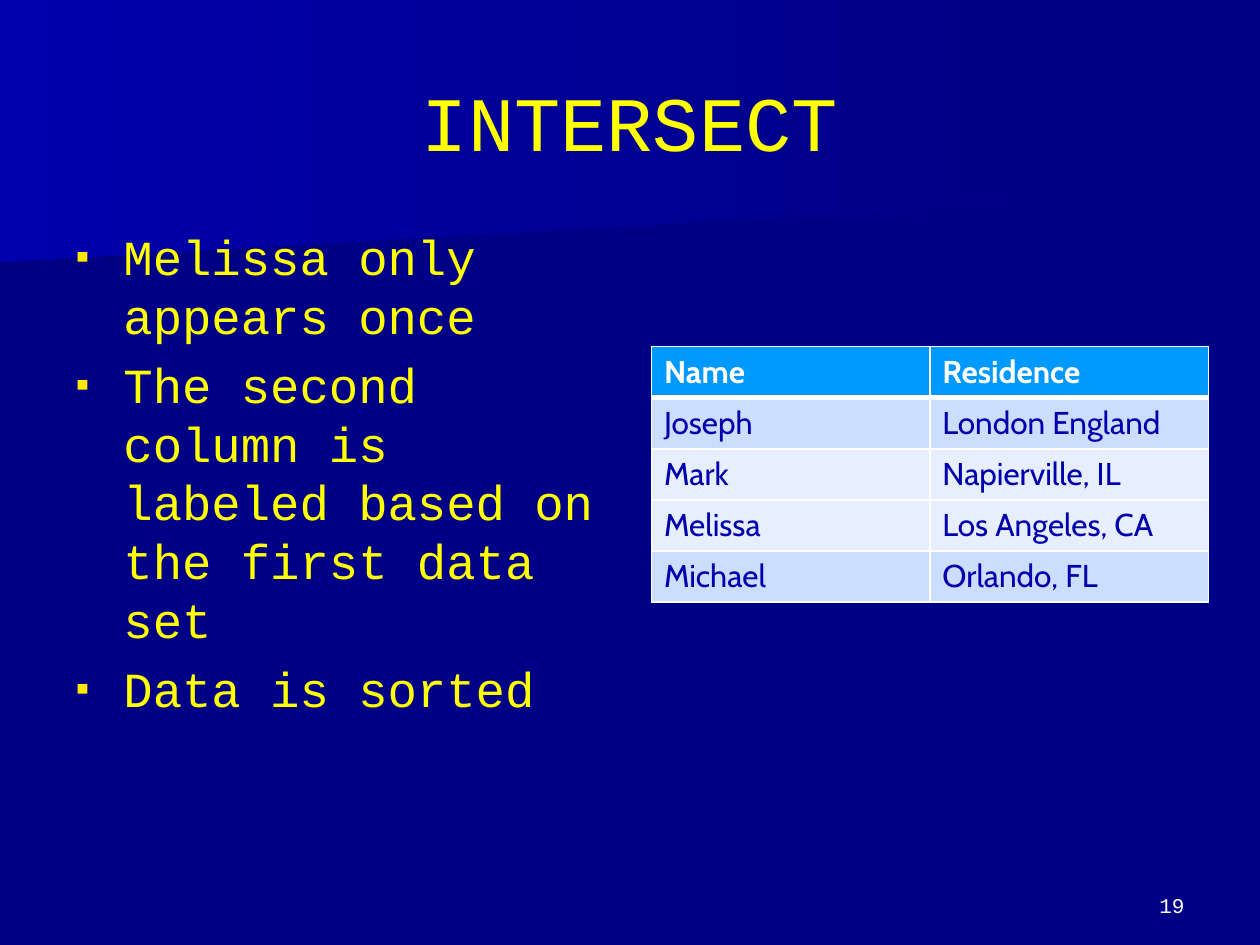
"""Build the INTERSECT slide with its bullet list and result table."""
from lxml import etree
from pptx import Presentation
from pptx import util as u
from pptx.dml.color import RGBColor
from pptx.enum import text
from pptx.oxml import ns

COLORS = {
    "back": "000086", "shade": "000083", "glow": "0000AC", "yellow": "FFFF00",
    "bullet": "FFE701", "white": "FFFFFF", "header": "0099FF",
    "band": "CBDEFF", "light": "E7EFFF",
}
MONO, SANS = "Courier New", "Cabin"
TITLE = "INTERSECT"
BULLETS = [
    "Melissa only appears once",
    "The second column is labeled based on the first data set",
    "Data is sorted",
]
ROWS = [
    ("Name", "Residence"),
    ("Joseph", "London England"),
    ("Mark", "Napierville, IL"),
    ("Melissa", "Los Angeles, CA"),
    ("Michael", "Orlando, FL"),
]
ROW_FILLS = ["header", "band", "light", "light", "band"]
PAGE = "19"
BEAMS = [
    ("shade", [(0, 1.01), (7.79, 1.01), (7.78, 1.53), (0, 2.17)]),
    ("glow", [(0, 0), (7.92, 0), (7.92, 1.62), (0, 2.08)]),
]


def rgb(name):
    return RGBColor.from_string(COLORS[name])


def add_color(parent, name):
    etree.SubElement(parent, ns.qn("a:srgbClr"), val=COLORS[name])


def add_bullet(p):
    pPr = p._p.get_or_add_pPr()
    pPr.set("marL", str(u.Inches(0.38)))
    pPr.set("indent", str(-u.Inches(0.38)))
    add_color(etree.SubElement(pPr, ns.qn("a:buClr")), "bullet")
    etree.SubElement(pPr, ns.qn("a:buSzPct"), val="80000")
    etree.SubElement(pPr, ns.qn("a:buChar"), char="▪")


def write(tf, lines, size, color, font=MONO, bold=False, align="LEFT",
          anchor="TOP", bullets=False, gap=0):
    tf.word_wrap = True
    tf.vertical_anchor = text.MSO_ANCHOR[anchor]
    for i, line in enumerate(lines):
        p = tf.paragraphs[0] if i == 0 else tf.add_paragraph()
        if bullets:
            add_bullet(p)
        p.alignment = text.PP_ALIGN[align]
        p.space_before = u.Pt(gap if i else 0)
        r = p.add_run()
        r.text = line
        r.font.name, r.font.size, r.font.bold = font, u.Pt(size), bold
        r.font.color.rgb = rgb(color)


def place(sp, *box):
    sp.left, sp.top, sp.width, sp.height = map(u.Inches, box)
    sp.text_frame.auto_size = text.MSO_AUTO_SIZE.NONE
    return sp.text_frame


def add_beam(s, depth, color, points):
    pts = [(u.Inches(x), u.Inches(y)) for x, y in points]
    builder = s.shapes.build_freeform(*pts[0])
    builder.add_line_segments(pts[1:], close=True)
    sp = builder.convert_to_shape()
    sp.shadow.inherit = False
    sp.line.fill.background()
    sp.fill.gradient()
    sp.fill.gradient_angle = 0
    for stop, name, pos in zip(sp.fill.gradient_stops, (color, "back"), (0, 1)):
        stop.color.rgb, stop.position = rgb(name), pos
    s.shapes._spTree.insert(2 + depth, sp._element)


def set_borders(cell, **widths):
    tcPr = cell._tc.get_or_add_tcPr()
    for i, side in enumerate("LRTB"):
        ln = etree.Element(ns.qn("a:ln" + side), w=str(u.Pt(widths.get(side, 1))))
        add_color(etree.SubElement(ln, ns.qn("a:solidFill")), "white")
        tcPr.insert(i, ln)


def add_results(s):
    box = map(u.Inches, (5.17, 2.75, 4.42, 2.03))
    table = s.shapes.add_table(len(ROWS), len(ROWS[0]), *box).table
    for i, (row, fill) in enumerate(zip(ROWS, ROW_FILLS)):
        for j, value in enumerate(row):
            cell = table.cell(i, j)
            cell.fill.solid()
            cell.fill.fore_color.rgb = rgb(fill)
            set_borders(cell, T=3 if i == 1 else 1, B=3 if i == 0 else 1)
            write(cell.text_frame, [value], 18, "glow" if i else "white",
                  font=SANS, bold=i == 0)


def main():
    prs = Presentation()
    prs.slide_width, prs.slide_height = u.Inches(10), u.Inches(7.5)
    s = prs.slides.add_slide(prs.slide_layouts[1])
    s.background.fill.solid()
    s.background.fill.fore_color.rgb = rgb("back")
    for depth, (color, points) in enumerate(BEAMS):
        add_beam(s, depth, color, points)
    write(place(s.shapes.title, 0.5, 0.33, 9, 1.25), [TITLE], 44, "yellow",
          align="CENTER", anchor="MIDDLE")
    write(place(s.placeholders[1], 0.5, 1.75, 4.42, 4.92), BULLETS, 28,
          "yellow", bullets=True, gap=5.6)
    add_results(s)
    number = s.shapes.add_textbox(0, 0, 0, 0)
    write(place(number, 7.17, 6.83, 2.33, 0.5), [PAGE], 12, "white",
          align="RIGHT", anchor="BOTTOM")
    prs.save("out.pptx")


if __name__ == "__main__":
    main()
